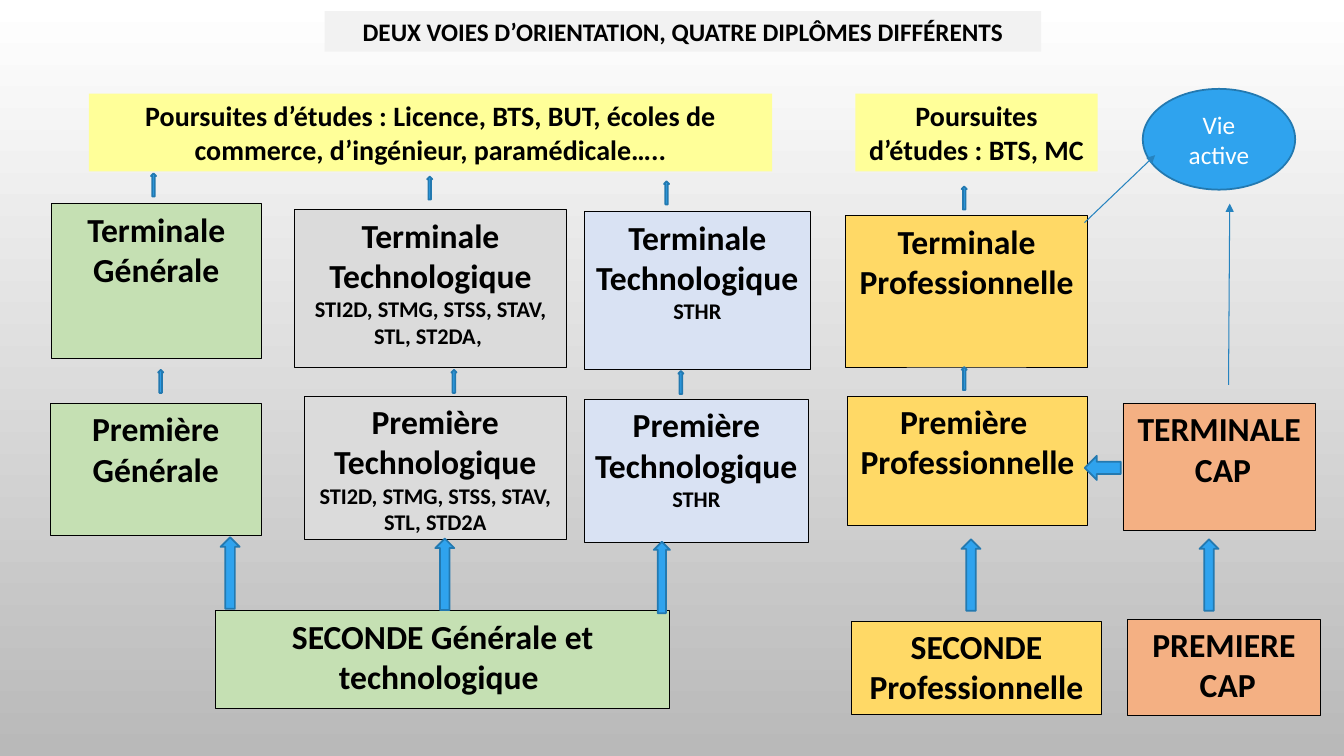
import pptx
import pptx.dml.color
import pptx.enum.shapes
import pptx.enum.text
import pptx.oxml
import pptx.oxml.ns
import pptx.util

Cm = pptx.util.Cm
Pt = pptx.util.Pt
RGBColor = pptx.dml.color.RGBColor
Shape = pptx.enum.shapes.MSO_SHAPE
Anchor = pptx.enum.text.MSO_ANCHOR

BLACK = RGBColor(0x00, 0x00, 0x00)
WHITE = RGBColor(0xFF, 0xFF, 0xFF)
BACKGROUND_END = RGBColor(0xB9, 0xB9, 0xB9)
TITLE_GREY = RGBColor(0xF2, 0xF2, 0xF2)
GREEN = RGBColor(0xC5, 0xE0, 0xB3)
GREY = RGBColor(0xDB, 0xDB, 0xDB)
PALE_BLUE = RGBColor(0xD9, 0xE2, 0xF3)
GOLD = RGBColor(0xFF, 0xD9, 0x66)
ORANGE = RGBColor(0xF4, 0xB0, 0x83)
YELLOW = RGBColor(0xFF, 0xFF, 0x99)
BLUE = RGBColor(0x2F, 0xA3, 0xEE)
BLUE_OUTLINE = RGBColor(0x23, 0x79, 0xB0)
BLUE_LINE = RGBColor(0x26, 0x83, 0xBF)


class OrientationSlide:
    font_name = "Calibri"
    heading_size = 24
    detail_size = 16

    def __init__(self, presentation):
        self.slide = presentation.slides.add_slide(presentation.slide_layouts[5])

    def background(self, top_color, bottom_color):
        fill = self.slide.background.fill
        fill.gradient()
        fill.gradient_angle = 270
        for stop, color in zip(fill.gradient_stops, (top_color, bottom_color)):
            stop.color.rgb = color

    def add_text(self, shape, lines, color=BLACK, bold=True, anchor=Anchor.TOP):
        frame = shape.text_frame
        frame.word_wrap = True
        frame.auto_size = pptx.enum.text.MSO_AUTO_SIZE.NONE
        frame.vertical_anchor = anchor
        for index, (text, size) in enumerate(lines):
            paragraph = frame.add_paragraph() if index else frame.paragraphs[0]
            paragraph.alignment = pptx.enum.text.PP_ALIGN.CENTER
            paragraph.line_spacing = 1.0
            paragraph.space_before = Pt(0)
            run = paragraph.add_run()
            run.text = text
            run.font.name = self.font_name
            run.font.size = Pt(size)
            run.font.bold = bold
            run.font.color.rgb = color

    def title(self, text, left, top, width, height):
        shape = self.slide.shapes.title
        shape.left, shape.top = Cm(left), Cm(top)
        shape.width, shape.height = Cm(width), Cm(height)
        shape.fill.solid()
        shape.fill.fore_color.rgb = TITLE_GREY
        self.add_text(shape, [(text, 18)])

    def shape(self, kind, place, fill, outline=None, weight=0.5):
        shape = self.slide.shapes.add_shape(kind, *map(Cm, place))
        shape.shadow.inherit = False
        shape.fill.solid()
        shape.fill.fore_color.rgb = fill
        if outline is None:
            shape.line.fill.background()
        else:
            shape.line.color.rgb = outline
            shape.line.width = Pt(weight)
        return shape

    def level(self, place, fill, headings, detail=None):
        lines = [(heading, self.heading_size) for heading in headings]
        if detail:
            lines.append((detail, self.detail_size))
        self.add_text(self.shape(Shape.RECTANGLE, place, fill, BLACK), lines)

    def further_study(self, place, text):
        self.add_text(self.shape(Shape.RECTANGLE, place, YELLOW), [(text, 20)])

    def ellipse(self, place, text):
        shape = self.shape(Shape.OVAL, place, BLUE, BLUE_OUTLINE, 1.25)
        self.add_text(shape, [(text, 18)], WHITE, False, Anchor.MIDDLE)

    def arrow(self, center_x, center_y, length, thickness, rotation=270):
        place = (center_x - length / 2, center_y - thickness / 2, length, thickness)
        shape = self.shape(Shape.RIGHT_ARROW, place, BLUE, BLUE_OUTLINE, 1.25)
        shape.rotation = rotation

    def line_arrow(self, *ends):
        connector = self.slide.shapes.add_connector(
            pptx.enum.shapes.MSO_CONNECTOR.STRAIGHT, *map(Cm, ends))
        connector.line.color.rgb = BLUE_LINE
        connector.line.width = Pt(0.75)
        namespace = pptx.oxml.ns.nsdecls("a")
        properties = connector._element.spPr
        properties.find(pptx.oxml.ns.qn("a:ln")).append(
            pptx.oxml.parse_xml(f'<a:tailEnd {namespace} type="triangle"/>'))
        properties.append(pptx.oxml.parse_xml(f"<a:effectLst {namespace}/>"))


LEVELS = [
    ((1.3, 5.13, 5.28, 3.89), GREEN, ["Terminale Générale"]),
    ((7.42, 5.28, 6.86, 3.99), GREY, ["Terminale Technologique"],
     "STI2D, STMG, STSS, STAV, STL, ST2DA, "),
    ((14.73, 5.33, 5.69, 3.99), PALE_BLUE, ["Terminale Technologique"], "STHR"),
    ((21.31, 5.44, 6.1, 3.81), GOLD, ["Terminale", "Professionnelle"]),
    ((21.36, 9.98, 6.05, 3.25), GOLD, ["Première ", "Professionnelle"]),
    ((1.27, 10.16, 5.31, 3.33), GREEN, ["Première Générale"]),
    ((14.73, 10.06, 5.64, 3.61), PALE_BLUE, ["Première", "Technologique"], "STHR"),
    ((7.67, 9.98, 6.6, 3.61), GREY, ["Première Technologique"],
     "STI2D, STMG, STSS, STAV, STL, STD2A"),
    ((28.3, 10.16, 4.85, 3.2), ORANGE, ["TERMINALE", " CAP"]),
    ((5.44, 15.39, 11.43, 2.46), GREEN, ["SECONDE Générale et technologique "]),
    ((21.46, 15.65, 6.3, 2.36), GOLD, ["SECONDE", "Professionnelle"]),
    ((28.42, 15.6, 4.85, 2.44), ORANGE, ["PREMIERE", " CAP"]),
]

LARGE_ARROWS = [(24.47, 14.49, 0.48), (30.47, 14.49, 0.48), (16.68, 14.55, 0.41),
                (11.21, 14.47, 0.48), (5.8, 14.44, 0.48)]

SMALL_ARROWS = [(17.16, 9.64), (11.44, 9.61), (4.05, 9.61), (24.3, 9.54),
                (16.8, 4.86), (10.83, 4.74), (3.87, 4.66), (24.3, 4.99)]


def main():
    presentation = pptx.Presentation()
    presentation.slide_width = Cm(33.87)
    presentation.slide_height = Cm(19.05)

    page = OrientationSlide(presentation)
    page.background(WHITE, BACKGROUND_END)
    page.title("DEUX VOIES D’ORIENTATION, QUATRE DIPLÔMES DIFFÉRENTS",
               8.18, 0.28, 18.06, 1.02)
    for level in LEVELS:
        page.level(*level)
    page.further_study((2.24, 2.36, 17.22, 1.96),
                       "Poursuites d’études : Licence, BTS, BUT, écoles de "
                       "commerce, d’ingénieur, paramédicale…..")
    page.further_study((21.56, 2.36, 6.1, 1.96), "Poursuites d’études : BTS, MC")
    page.ellipse((28.8, 2.24, 3.84, 2.54), "Vie active")
    page.line_arrow(27.33, 5.61, 29.11, 3.91)
    page.line_arrow(30.96, 9.7, 30.99, 5.13)
    page.arrow(27.79, 11.79, 0.91, 0.61, 180)
    for center_x, center_y, thickness in LARGE_ARROWS:
        page.arrow(center_x, center_y, 1.8, thickness)
    for center_x, center_y in SMALL_ARROWS:
        page.arrow(center_x, center_y, 0.58, 0.13)

    presentation.save("out.pptx")


if __name__ == "__main__":
    main()
